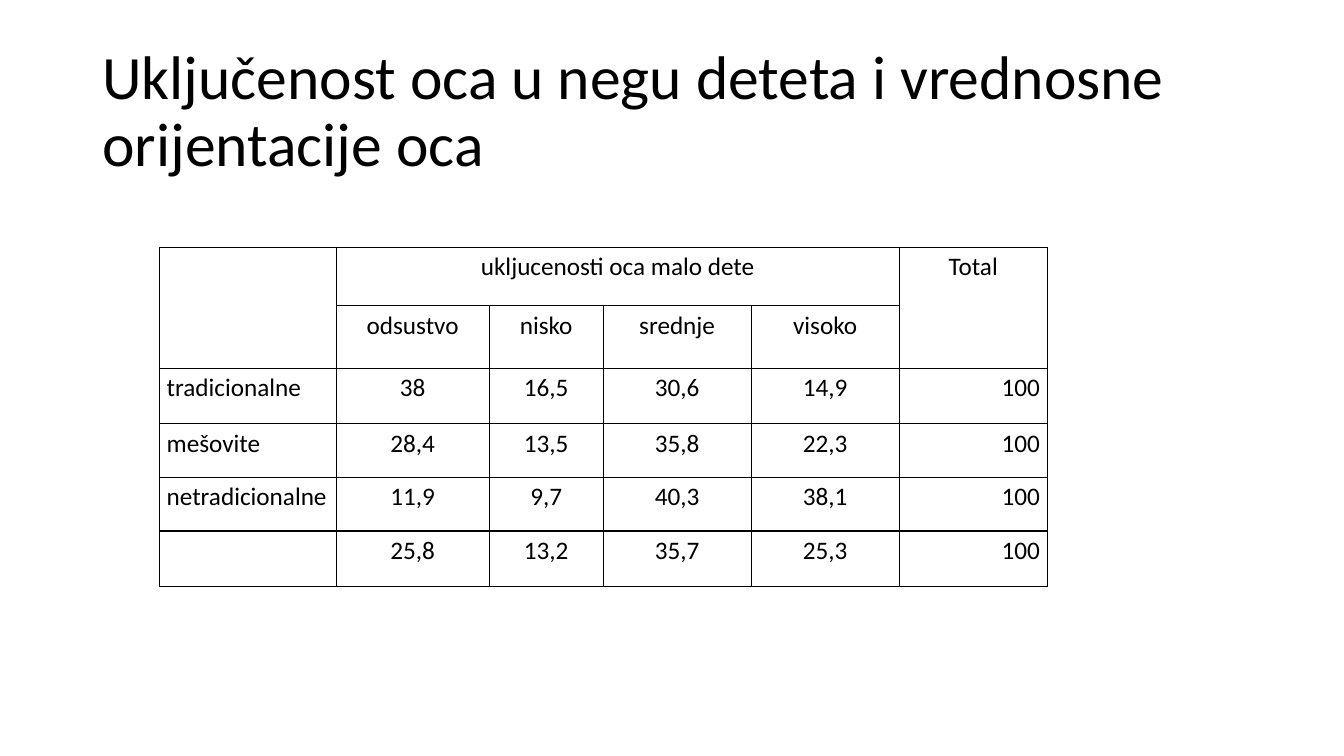
from lxml import etree
from pptx import Presentation
from pptx.dml.color import RGBColor
from pptx.enum.text import MSO_ANCHOR, PP_ALIGN
from pptx.oxml.ns import qn
from pptx.util import Cm, Pt

LEFT, CENTER, RIGHT = PP_ALIGN.LEFT, PP_ALIGN.CENTER, PP_ALIGN.RIGHT
MIDDLE, TOP = MSO_ANCHOR.MIDDLE, MSO_ANCHOR.TOP

COLORS = {"text": "000000", "border": "000000"}
FONT = "Calibri"

TITLE = "Uključenost oca u negu deteta i vrednosne orijentacije oca"
TITLE_FORMAT = {"alignment": LEFT, "line_spacing": 0.9}
CELL_FORMAT = {"line_spacing": 1.15, "space_before": Pt(6)}
CELL_MARGINS = {"margin_left": Cm(0.18), "margin_right": Cm(0.18),
                "margin_top": 0, "margin_bottom": 0, "vertical_anchor": TOP}

COL_WIDTHS = [4.45, 3.86, 2.87, 3.73, 3.73, 3.73]
ROW_HEIGHTS = [1.47, 1.58, 1.4, 1.35, 1.35, 1.4]
HEADER_ROWS = 2
ROWS = [
    ["", "ukljucenosti oca malo dete", "", "", "", "Total"],
    ["", "odsustvo", "nisko", "srednje", "visoko", ""],
    ["tradicionalne", "38", "16,5", "30,6", "14,9", "100"],
    ["mešovite", "28,4", "13,5", "35,8", "22,3", "100"],
    ["netradicionalne", "11,9", "9,7", "40,3", "38,1", "100"],
    ["", "25,8", "13,2", "35,7", "25,3", "100"],
]
# First and last cell of each merged header, as (row, column)
MERGES = [((0, 0), (1, 0)), ((0, 1), (0, 4)), ((0, 5), (1, 5))]


def set_attributes(obj, values):
    for name, value in values.items():
        setattr(obj, name, value)


def write_text(tf, text, size, paragraph_format):
    p = tf.paragraphs[0]
    set_attributes(p, paragraph_format)
    r = p.add_run()
    r.text = text
    set_attributes(r.font, {"name": FONT, "size": Pt(size)})
    r.font.color.rgb = RGBColor.from_string(COLORS["text"])


def add_title(s, text):
    sp = s.shapes.add_textbox(Cm(2.33), Cm(1.01), Cm(29.21), Cm(3.68))
    tf = sp.text_frame
    set_attributes(tf, {"word_wrap": True, "vertical_anchor": MIDDLE})
    write_text(tf, text, 44, TITLE_FORMAT)


def set_borders(cell):
    tc_pr = cell._tc.get_or_add_tcPr()
    for i, side in enumerate(("a:lnL", "a:lnR", "a:lnT", "a:lnB")):
        ln = etree.Element(qn(side), w=str(Pt(1)))
        fill = etree.SubElement(ln, qn("a:solidFill"))
        etree.SubElement(fill, qn("a:srgbClr"), val=COLORS["border"])
        tc_pr.insert(i, ln)


def cell_alignment(row, col):
    if row < HEADER_ROWS:
        return CENTER
    if col == 0:
        return LEFT
    return RIGHT if col == len(COL_WIDTHS) - 1 else CENTER


def add_data_table(s):
    frame = s.shapes.add_table(len(ROWS), len(COL_WIDTHS), Cm(4.02), Cm(6.23),
                               Cm(sum(COL_WIDTHS)), Cm(sum(ROW_HEIGHTS)))
    table = frame.table
    set_attributes(table, {"first_row": False, "horz_banding": False})
    for column, width in zip(table.columns, COL_WIDTHS):
        column.width = Cm(width)
    for row, height in zip(table.rows, ROW_HEIGHTS):
        row.height = Cm(height)

    # Cell text, fill and borders
    for i, texts in enumerate(ROWS):
        for j, text in enumerate(texts):
            cell = table.cell(i, j)
            set_attributes(cell, CELL_MARGINS)
            cell.fill.background()
            set_borders(cell)
            if text:
                alignment = {"alignment": cell_alignment(i, j)}
                write_text(cell.text_frame, text, 18, CELL_FORMAT | alignment)

    # Merged headers
    for first, last in MERGES:
        table.cell(*first).merge(table.cell(*last))


def main():
    prs = Presentation()
    set_attributes(prs, {"slide_width": Cm(33.87), "slide_height": Cm(19.05)})
    s = prs.slides.add_slide(prs.slide_layouts[6])
    add_title(s, TITLE)
    add_data_table(s)
    prs.save("out.pptx")


if __name__ == "__main__":
    main()
